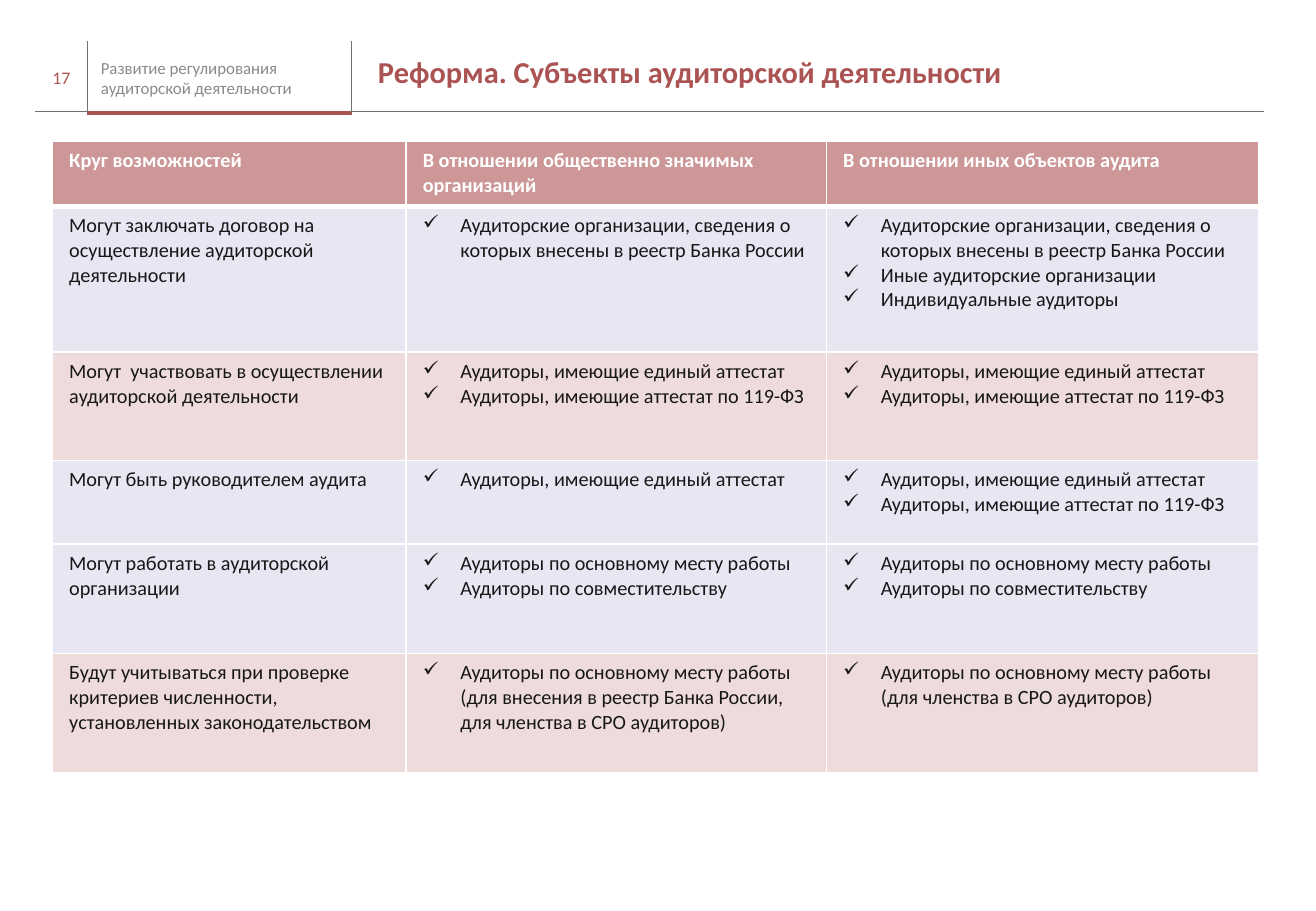
from dataclasses import dataclass

from lxml import etree
from pptx import Presentation
from pptx import util as u
from pptx.dml.color import RGBColor
from pptx.enum import shapes, text
from pptx.oxml import ns

PX = 9144  # EMU per px, 100 px to the inch
FONT = "Calibri"
COLORS = {
    "accent": "AB5253", "rule": "707070", "muted": "8A8A8D", "ink": "181717",
    "white": "FFFFFF", "header": "CD9797", "lilac": "E7E7F4", "rose": "EEDCDC",
}


@dataclass(frozen=True)
class Rule:
    x1: int
    y1: int
    x2: int
    y2: int
    color: str = "rule"
    width: float = 0.25


@dataclass(frozen=True)
class Row:
    height: int
    fill: str
    topic: str
    public: list[str]
    other: list[str]


RULES = [
    Rule(29, 92, 72, 92),
    Rule(72, 93, 290, 93, "accent", 2.25),
    Rule(288, 92, 1040, 92),
    Rule(72, 34, 72, 93),
    Rule(289, 34, 289, 93),
]

REGISTERED = "Аудиторские организации, сведения о которых внесены в реестр Банка России"
UNIFIED = "Аудиторы, имеющие единый аттестат"
CERTIFIED = [UNIFIED, "Аудиторы, имеющие аттестат по 119-ФЗ"]
MAIN_JOB = "Аудиторы по основному месту работы"
EMPLOYED = [MAIN_JOB, "Аудиторы по совместительству"]

HEADINGS = ["Круг возможностей", "В отношении общественно значимых организаций",
            "В отношении иных объектов аудита"]
HEADER_HEIGHT = 54
COLUMNS = [291, 346, 356]
ROWS = [
    Row(120, "lilac", "Могут заключать договор на осуществление аудиторской деятельности",
        [REGISTERED],
        [REGISTERED, "Иные аудиторские организации", "Индивидуальные аудиторы"]),
    Row(89, "rose", "Могут  участвовать в осуществлении аудиторской деятельности",
        CERTIFIED, CERTIFIED),
    Row(69, "lilac", "Могут быть руководителем аудита", [UNIFIED], CERTIFIED),
    Row(90, "lilac", "Могут работать в аудиторской организации", EMPLOYED, EMPLOYED),
    Row(98, "rose",
        "Будут учитываться при проверке критериев численности, установленных законодательством",
        [f"{MAIN_JOB} (для внесения в реестр Банка России, для членства в СРО аудиторов)"],
        [f"{MAIN_JOB} (для членства в СРО аудиторов)"]),
]


def px(n: int) -> u.Emu:
    return u.Emu(n * PX)


def rgb(name: str) -> RGBColor:
    return RGBColor.from_string(COLORS[name])


def write(tf, lines: list[str], *, size: float, color: str, bold: bool = False,
          align=text.PP_ALIGN.LEFT, spacing: float = 1.0, bullet: str = "") -> None:
    """Fill a text frame with one paragraph per line."""
    for i, line in enumerate(lines):
        p = tf.add_paragraph() if i else tf.paragraphs[0]
        p.alignment, p.line_spacing = align, spacing
        if bullet:
            pPr = p._p.get_or_add_pPr()
            pPr.set("marL", str(px(31)))
            pPr.set("indent", str(px(-31)))
            etree.SubElement(pPr, ns.qn("a:buChar"), char=bullet)
        r = p.add_run()
        r.text = line
        r.font.name, r.font.size, r.font.bold = FONT, u.Pt(size), bold
        r.font.color.rgb = rgb(color)


def place(sp, x: int, y: int, w: int, h: int, inset_x: int = 0, inset_y: int = 0):
    """Set the box of a shape and return its middle-anchored text frame."""
    sp.left, sp.top, sp.width, sp.height = map(px, (x, y, w, h))
    tf = sp.text_frame
    tf.word_wrap, tf.auto_size = True, text.MSO_AUTO_SIZE.NONE
    tf.vertical_anchor = text.MSO_ANCHOR.MIDDLE
    tf.margin_left = tf.margin_right = px(inset_x)
    tf.margin_top = tf.margin_bottom = px(inset_y)
    return tf


def add_rule(s, rule: Rule) -> None:
    line = s.shapes.add_connector(shapes.MSO_CONNECTOR.STRAIGHT,
                                  *map(px, (rule.x1, rule.y1, rule.x2, rule.y2)))
    line.line.color.rgb, line.line.width = rgb(rule.color), u.Pt(rule.width)
    etree.SubElement(line._element.spPr, ns.qn("a:effectLst"))


def style_cell(cell, fill: str, top: float = 1, bottom: float = 1) -> None:
    """Set insets, fill and white borders; top and bottom are border points."""
    cell.margin_left, cell.margin_right = px(14), px(12)
    cell.margin_top = cell.margin_bottom = px(6)
    cell.fill.solid()
    cell.fill.fore_color.rgb = rgb(fill)
    tcPr = cell._tc.get_or_add_tcPr()
    for i, (side, width) in enumerate(zip("LRTB", (1, 1, top, bottom))):
        ln = etree.Element(ns.qn(f"a:ln{side}"), w=str(u.Pt(width)))
        solid = etree.SubElement(ln, ns.qn("a:solidFill"))
        etree.SubElement(solid, ns.qn("a:srgbClr"), val=COLORS["white"])
        tcPr.insert(i, ln)


def add_rights_table(s) -> None:
    heights = [HEADER_HEIGHT, *(row.height for row in ROWS)]
    table = s.shapes.add_table(len(heights), len(COLUMNS), px(43), px(116),
                               px(sum(COLUMNS)), px(sum(heights))).table
    table.horz_banding = False
    for column, width in zip(table.columns, COLUMNS):
        column.width = px(width)
    for table_row, height in zip(table.rows, heights):
        table_row.height = px(height)
    for c, heading in enumerate(HEADINGS):
        cell = table.cell(0, c)
        style_cell(cell, "header", bottom=3)
        write(cell.text_frame, [heading], size=12, color="white", bold=True)
    for r, row in enumerate(ROWS, 1):
        for c, lines in enumerate(([row.topic], row.public, row.other)):
            cell = table.cell(r, c)
            style_cell(cell, row.fill, top=3 if r == 1 else 1)
            write(cell.text_frame, lines, size=12, color="ink", bullet="✓" if c else "")


def main() -> None:
    prs = Presentation()
    prs.slide_width, prs.slide_height = px(1083), px(750)
    s = prs.slides.add_slide(prs.slide_layouts[5])
    for rule in RULES:
        add_rule(s, rule)
    write(place(s.shapes.title, 301, 30, 552, 62, 10, 5),
          ["Реформа. Субъекты аудиторской деятельности"],
          size=18, color="accent", bold=True, spacing=0.9)
    number = s.shapes.add_textbox(0, 0, 0, 0)
    write(place(number, 29, 44, 43, 40), ["17"],
          size=10.5, color="accent", align=text.PP_ALIGN.CENTER)
    section = s.shapes.add_textbox(0, 0, 0, 0)
    write(place(section, 83, 47, 203, 34),
          ["Развитие регулирования аудиторской деятельности"], size=10, color="muted")
    add_rights_table(s)
    prs.save("out.pptx")


if __name__ == "__main__":
    main()
